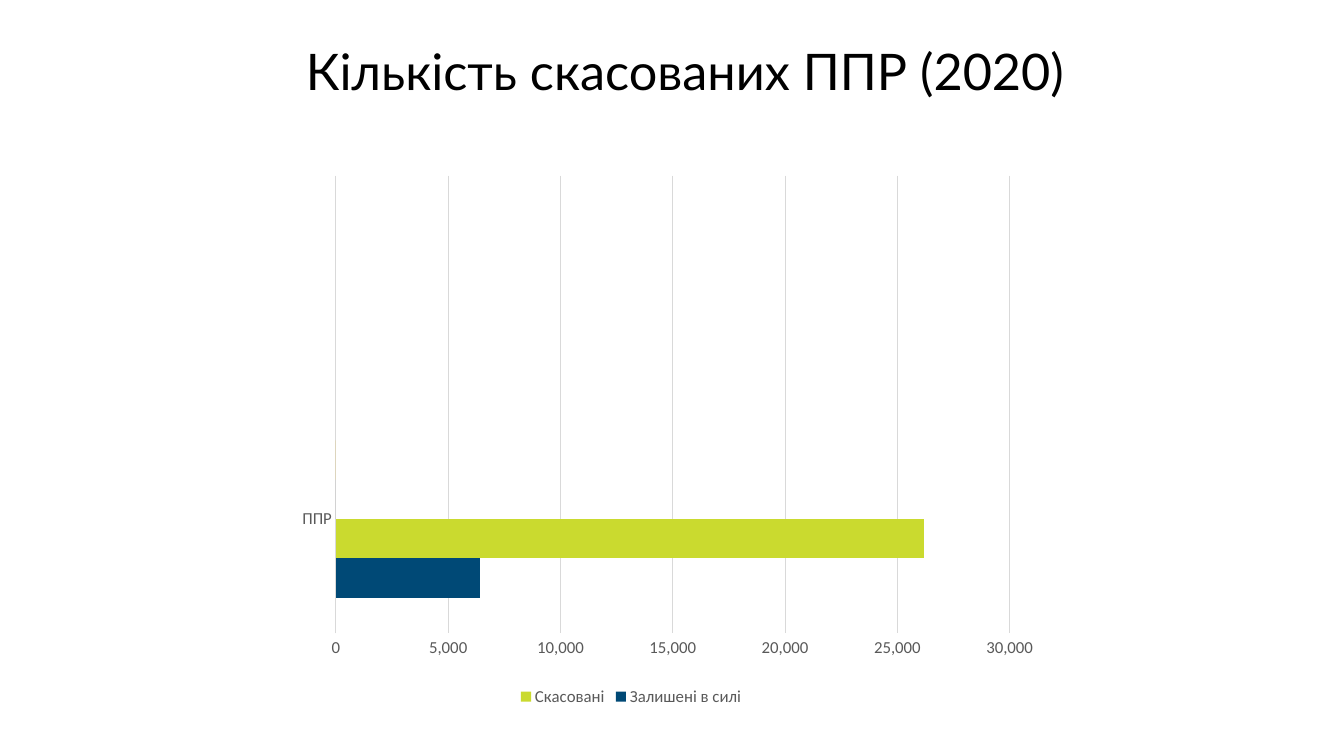
from pptx import Presentation
from pptx.chart.data import CategoryChartData
from pptx.dml.color import RGBColor
from pptx.enum.chart import XL_CHART_TYPE, XL_LEGEND_POSITION, XL_TICK_MARK
from pptx.enum.text import MSO_AUTO_SIZE, PP_ALIGN
from pptx.oxml import parse_xml
from pptx.oxml.ns import nsdecls
from pptx.util import Inches, Pt

BAR_CLUSTERED = XL_CHART_TYPE.BAR_CLUSTERED
LEGEND_BOTTOM = XL_LEGEND_POSITION.BOTTOM
NO_TICK = XL_TICK_MARK.NONE
CENTER = PP_ALIGN.CENTER
FIT_SHAPE = MSO_AUTO_SIZE.SHAPE_TO_FIT_TEXT

# The two unnamed series hold empty bar slots above the visible bars
SERIES = [
    ("Залишені в силі", (6400, None), "004976"),
    ("Скасовані", (26200, None), "CADA2F"),
    ("", (0, None), "A5A5A5"),
    ("", (0, None), "FFC000"),
]
PLOT_LAYOUT = {"x": 0.142, "y": 0.028, "w": 0.817, "h": 0.832}


def color(hex_value):
    return RGBColor.from_string(hex_value)


def style_font(font, size, hex_value, name="Calibri"):
    font.size = Pt(size)
    font.name = name
    font.color.rgb = color(hex_value)


deck = Presentation()
deck.slide_width = Inches(13.33)
deck.slide_height = Inches(7.5)
page = deck.slides.add_slide(deck.slide_layouts[6])

# Bar chart
data = CategoryChartData(number_format="#,##0")
data.categories = ["ППР", ""]
for name, values, _ in SERIES:
    data.add_series(name, values)
chart = page.shapes.add_chart(
    BAR_CLUSTERED, Inches(2.17), Inches(1.59), Inches(8.18), Inches(5.46), data
).chart
chart.has_title = False
style_font(chart.font, 10, "000000")

plot = chart.plots[0]
plot.gap_width = 182
plot.vary_by_categories = False
for series, (_, _, fill) in zip(plot.series, SERIES):
    series.format.fill.solid()
    series.format.fill.fore_color.rgb = color(fill)
    series.invert_if_negative = False

# Axes
category_axis, value_axis = chart.category_axis, chart.value_axis
for axis in (category_axis, value_axis):
    axis.major_tick_mark = axis.minor_tick_mark = NO_TICK
    style_font(axis.tick_labels.font, 12, "595959")
value_axis.minimum_scale = 0
value_axis.maximum_scale = 30000
value_axis.major_unit = 5000
value_axis.tick_labels.number_format = "#,##0"
value_axis.tick_labels.number_format_is_linked = False
value_axis.format.line.fill.background()
value_axis.has_major_gridlines = True
for line in (category_axis.format.line, value_axis.major_gridlines.format.line):
    line.width = Pt(0.75)
    line.color.rgb = color("D9D9D9")

# Legend; bar chart entries count from the last series
chart.has_legend = True
chart.legend.position = LEGEND_BOTTOM
chart.legend.include_in_layout = False
style_font(chart.legend.font, 12, "595959")
legend_position = chart.element.xpath(".//c:legend/c:legendPos")[0]
for index in (1, 0):
    legend_position.addnext(parse_xml(
        f'<c:legendEntry {nsdecls("c")}><c:idx val="{index}"/>'
        '<c:delete val="1"/></c:legendEntry>'
    ))

# Inner plot area
plot_area = chart.element.xpath(".//c:plotArea")[0]
for layout in plot_area.xpath("./c:layout"):
    plot_area.remove(layout)
modes = "".join(f'<c:{side}Mode val="edge"/>' for side in "xy")
sizes = "".join(f'<c:{key} val="{value}"/>' for key, value in PLOT_LAYOUT.items())
plot_area.insert(0, parse_xml(
    f'<c:layout {nsdecls("c")}><c:manualLayout><c:layoutTarget val="inner"/>'
    f'{modes}{sizes}</c:manualLayout></c:layout>'
))

# Title
box = page.shapes.add_textbox(Inches(2.78), Inches(0.35), Inches(8.03), Inches(0.71))
box.text_frame.word_wrap = False
box.text_frame.auto_size = FIT_SHAPE
para = box.text_frame.paragraphs[0]
para.alignment = CENTER
span = para.add_run()
span.text = "Кількість скасованих ППР (2020)"
style_font(span.font, 36, "000000", "Lato")

deck.save("out.pptx")
